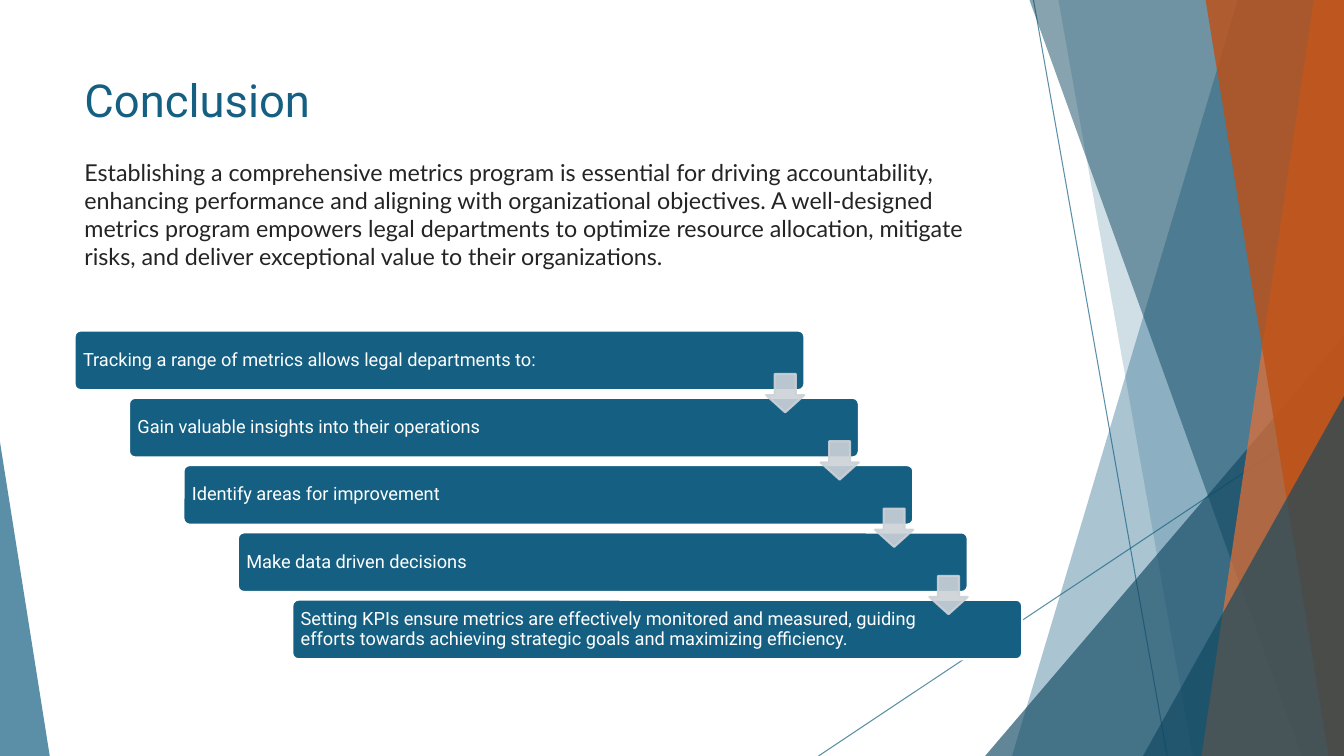
"""Build the conclusion slide: faceted backdrop, heading, summary and staircase of steps."""
from lxml import etree
from pptx import Presentation, util as u
from pptx.dml.color import RGBColor
from pptx.enum import shapes, text
from pptx.oxml import ns

WIDTH, HEIGHT = u.Inches(13.33), u.Inches(7.5)
BLUE = RGBColor(0x15, 0x60, 0x82)
DEEP_BLUE = RGBColor(0x10, 0x48, 0x62)
ORANGE = RGBColor(0xE9, 0x71, 0x32)
RUST = RGBColor(0xC0, 0x4F, 0x15)
SILVER = RGBColor(0xCC, 0xD2, 0xD8)
WHITE = RGBColor(0xFF, 0xFF, 0xFF)
INK = RGBColor(0x24, 0x24, 0x24)

MARGIN, CONTENT_WIDTH = 5.55, 70.5
STEP_TOP, STEP_RIGHT, STEP_DOWN = 43.73, 4.05, 8.9
CARD_WIDTH, CARD_HEIGHT = 54.3, 7.87
ARROW_WIDTH, ARROW_HEIGHT, ARROW_DROP = 2.85, 5.07, 5.75

SUMMARY = (
    "Establishing a comprehensive metrics program is essential for driving accountability, "
    "enhancing performance and aligning with organizational objectives. A well-designed "
    "metrics program empowers legal departments to optimize resource allocation, mitigate "
    "risks, and deliver exceptional value to their organizations."
)
STEPS = [
    "Tracking a range of metrics allows legal departments to:",
    "Gain valuable insights into their operations",
    "Identify areas for improvement",
    "Make data driven decisions",
    "Setting KPIs ensure metrics are effectively monitored and measured, guiding "
    "efforts towards achieving strategic goals and maximizing efficiency.",
]


def across(percent):
    """Return a share of the slide width."""
    return round(WIDTH * percent / 100)


def down(percent):
    """Return a share of the slide height."""
    return round(HEIGHT * percent / 100)


def frame(left, top, width, height):
    """Turn shares of the slide into a position and size."""
    return across(left), down(top), across(width), down(height)


def set_opacity(shape, percent):
    """Make every colour of a shape partly transparent."""
    for color in shape._element.spPr.iter(ns.qn("a:srgbClr")):
        etree.SubElement(color, ns.qn("a:alpha"), val=str(percent * 1000))


def paint(shape, color, opacity=100, outline=None):
    """Give a shape a flat fill, an optional outline and no shadow."""
    shape.shadow.inherit = False
    shape.fill.solid()
    shape.fill.fore_color.rgb = color
    if outline is None:
        shape.line.fill.background()
    else:
        shape.line.color.rgb = outline
        shape.line.width = u.Pt(1.5)
    if opacity < 100:
        set_opacity(shape, opacity)


def write(shape, content, font, size, color, anchor=text.MSO_ANCHOR.TOP):
    """Write one left-aligned paragraph into a shape."""
    text_frame = shape.text_frame
    text_frame.text = content
    text_frame.word_wrap = True
    text_frame.vertical_anchor = anchor
    paragraph = text_frame.paragraphs[0]
    paragraph.alignment = text.PP_ALIGN.LEFT
    run_font = paragraph.runs[0].font
    run_font.name, run_font.size = font, u.Pt(size)
    run_font.color.rgb = color
    return paragraph


def add_text(slide, top, height, *style):
    """Add a text box across the content area."""
    box = slide.shapes.add_textbox(*frame(MARGIN, top, CONTENT_WIDTH, height))
    write(box, *style)


def add_ray(slide, start, end):
    """Add a thin translucent line."""
    points = across(start[0]), down(start[1]), across(end[0]), down(end[1])
    ray = slide.shapes.add_connector(shapes.MSO_CONNECTOR.STRAIGHT, *points)
    ray.line.color.rgb = BLUE
    ray.line.width = u.Pt(0.75)
    set_opacity(ray, 70)
    etree.SubElement(ray._element.spPr, ns.qn("a:effectLst"))


def add_facet(slide, top_left, bottom_left, color, opacity):
    """Add a slanted panel that reaches the right edge of the slide."""
    builder = slide.shapes.build_freeform(across(top_left), 0)
    corners = [(100, 0), (100, 100), (bottom_left, 100)]
    builder.add_line_segments([(across(x), down(y)) for x, y in corners])
    paint(builder.convert_to_shape(), color, opacity)


def add_corner(slide, left, top, width, apex, color, opacity):
    """Add a right triangle that stands on the bottom edge."""
    place = frame(left, top, width, 100 - top)
    corner = slide.shapes.add_shape(shapes.MSO_SHAPE.ISOSCELES_TRIANGLE, *place)
    corner.adjustments[0] = apex
    paint(corner, color, opacity)


def add_backdrop(slide):
    """Add the layered facets, back to front."""
    add_ray(slide, (76.9, 0), (86.85, 100))
    add_ray(slide, (100, 53.7), (60.9, 100))
    add_facet(slide, 92.1, 75.3, BLUE, 36)
    add_facet(slide, 78.75, 88.75, BLUE, 20)
    add_corner(slide, 73.3, 44.4, 26.7, 1, DEEP_BLUE, 66)
    add_facet(slide, 76.6, 96.85, DEEP_BLUE, 50)
    add_facet(slide, 97.75, 89.4, ORANGE, 70)
    add_facet(slide, 89.7, 98.85, RUST, 80)
    add_corner(slide, 85.05, 52.4, 14.95, 1, DEEP_BLUE, 66)
    add_corner(slide, 0, 58.5, 3.7, 0, BLUE, 70)


def add_card(slide, index, content):
    """Add one step of the staircase."""
    place = frame(MARGIN + index * STEP_RIGHT, STEP_TOP + index * STEP_DOWN,
                  CARD_WIDTH, CARD_HEIGHT)
    card = slide.shapes.add_shape(shapes.MSO_SHAPE.ROUNDED_RECTANGLE, *place)
    card.adjustments[0] = 0.1
    paint(card, BLUE, outline=WHITE)
    paragraph = write(card, content, "Roboto", 13, WHITE, text.MSO_ANCHOR.MIDDLE)
    paragraph.line_spacing = 0.9
    text_frame = card.text_frame
    text_frame.margin_left, text_frame.margin_right = across(0.5), across(7.4)
    text_frame.margin_top = text_frame.margin_bottom = down(0.7)


def add_arrow(slide, index):
    """Add the arrow that leads from one step to the next."""
    left = MARGIN + CARD_WIDTH - ARROW_WIDTH + index * STEP_RIGHT
    top = STEP_TOP + ARROW_DROP + index * STEP_DOWN
    place = frame(left, top, ARROW_WIDTH, ARROW_HEIGHT)
    arrow = slide.shapes.add_shape(shapes.MSO_SHAPE.DOWN_ARROW, *place)
    arrow.adjustments[0], arrow.adjustments[1] = 0.55, 0.45
    paint(arrow, SILVER, 90, SILVER)


def main():
    """Build and save the slide."""
    presentation = Presentation()
    presentation.slide_width, presentation.slide_height = WIDTH, HEIGHT
    slide = presentation.slides.add_slide(presentation.slide_layouts[6])
    add_backdrop(slide)
    add_text(slide, 8.93, 11, "Conclusion", "Roboto", 32.4, BLUE)
    for index, content in enumerate(STEPS):
        add_card(slide, index, content)
    for index in range(len(STEPS) - 1):
        add_arrow(slide, index)
    add_text(slide, 20.27, 18, SUMMARY, "Lato", 16.6, INK)
    presentation.save("out.pptx")


if __name__ == "__main__":
    main()
